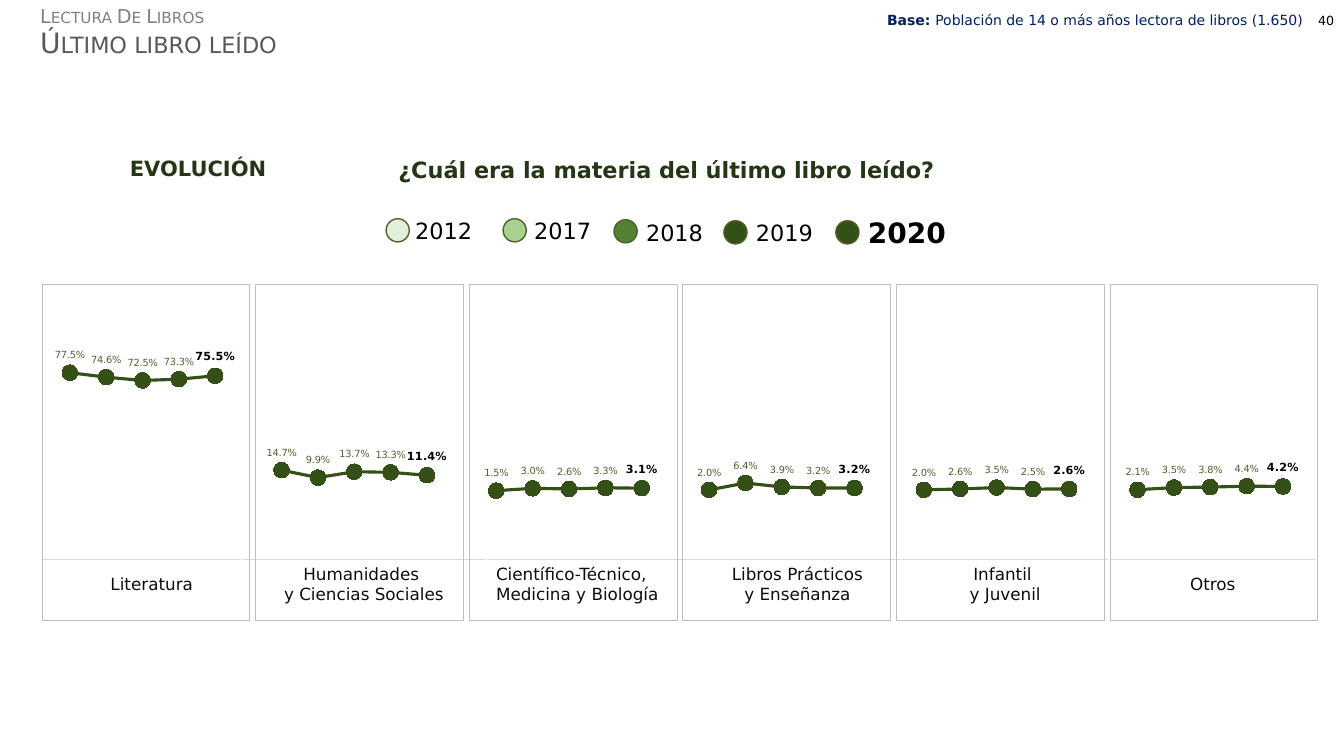
from lxml import etree
from pptx import Presentation
from pptx.chart import data as chart_data
from pptx.dml.color import RGBColor
from pptx.enum import chart as chart_enum, shapes, text
from pptx.oxml import parse_xml
from pptx.oxml.ns import nsdecls, qn
from pptx.util import Inches, Pt

FONT = "DejaVu Sans"
BLACK = RGBColor(0x00, 0x00, 0x00)
WHITE = RGBColor(0xFF, 0xFF, 0xFF)
INK = RGBColor(0x0D, 0x0D, 0x0D)
GRAY = RGBColor(0x80, 0x80, 0x80)
DARK_GRAY = RGBColor(0x59, 0x59, 0x59)
PANEL_GRAY = RGBColor(0xBF, 0xBF, 0xBF)
RULE_GRAY = RGBColor(0xD9, 0xD9, 0xD9)
NAVY = RGBColor(0x00, 0x20, 0x60)
HEADING_GREEN = RGBColor(0x23, 0x36, 0x16)
LABEL_GREEN = RGBColor(0x4E, 0x61, 0x2D)
DEEP_GREEN = RGBColor(0x34, 0x50, 0x16)
MID_GREEN = RGBColor(0x54, 0x82, 0x35)
LIGHT_GREEN = RGBColor(0xA9, 0xD1, 0x8E)
PALE_GREEN = RGBColor(0xE2, 0xF0, 0xD9)

PERCENT = '0.0"%"'
PANEL_SIZE = (2.06, 3.34)
PANEL_LEFT, PANEL_TOP = 0.42, 2.82
PANEL_PITCH = (11.01 - PANEL_LEFT) / 5
CENTER, LEFT, RIGHT = text.PP_ALIGN.CENTER, text.PP_ALIGN.LEFT, text.PP_ALIGN.RIGHT
MIDDLE, TOP = text.MSO_ANCHOR.MIDDLE, text.MSO_ANCHOR.TOP

# subject lines, alignment, column width, chart left, yearly percentages
SUBJECTS = [
    (["Literatura"], CENTER, 1.98, 0.42, (77.5, 74.6, 72.5, 73.3, 75.5)),
    (["Humanidades ", "y Ciencias Sociales"], CENTER, 2.42, 2.52,
     (14.7, 9.9, 13.7, 13.3, 11.4)),
    (["Científico-Técnico,", "Medicina y Biología"], LEFT, 2.06, 4.65,
     (1.5, 3, 2.6, 3.3, 3.1)),
    (["Libros Prácticos", "y Enseñanza"], CENTER, 2.06, 6.76,
     (2, 6.4, 3.9, 3.2, 3.2)),
    (["Infantil ", "y Juvenil"], CENTER, 2.06, 8.89, (2, 2.6, 3.5, 2.5, 2.6)),
    (["Otros"], CENTER, 2.06, 11.01, (2.1, 3.5, 3.8, 4.4, 4.2)),
]

# year, dot colour, dot left and top, year box (left, top, width, height)
YEARS = [
    ("2012", PALE_GREEN, 3.83, 2.17, (4.02, 2.11, 0.77, 0.37)),
    ("2017", LIGHT_GREEN, 4.99, 2.17, (5.2, 2.11, 0.77, 0.37)),
    ("2018", MID_GREEN, 6.09, 2.18, (6.31, 2.12, 0.77, 0.37)),
    ("2019", DEEP_GREEN, 7.18, 2.19, (7.4, 2.13, 0.77, 0.37)),
    ("2020", DEEP_GREEN, 8.29, 2.19, (8.51, 2.09, 1, 0.44)),
]


def style_run(run, size, color, bold=False, small_caps=False):
    run.font.name, run.font.size, run.font.bold = FONT, Pt(size), bold
    run.font.color.rgb = color
    if small_caps:
        run.font._element.set("cap", "small")


def add_text(slide, box, *runs, size, color, bold=False, align=LEFT, anchor=TOP,
             wrap=True, spacing=None, small_caps=False):
    """Place one paragraph; each run is a string or a (string, bold) pair."""
    frame = slide.shapes.add_textbox(*map(Inches, box)).text_frame
    frame.word_wrap, frame.vertical_anchor = wrap, anchor
    paragraph = frame.paragraphs[0]
    paragraph.alignment = align
    if spacing:
        paragraph.line_spacing = spacing
    for item in runs:
        words, heavy = (item, bold) if isinstance(item, str) else item
        run = paragraph.add_run()
        run.text = words
        style_run(run, size, color, heavy, small_caps)


def add_outlined(slide, kind, box, line, width, fill=None):
    shape = slide.shapes.add_shape(kind, *map(Inches, box))
    shape.shadow.inherit = False
    if fill is None:
        shape.fill.background()
    else:
        shape.fill.solid()
        shape.fill.fore_color.rgb = fill
    shape.line.color.rgb, shape.line.width = line, Pt(width)


def set_border(cell, side, color, width):
    border = etree.SubElement(cell._tc.get_or_add_tcPr(), qn("a:" + side), w=str(Pt(width)))
    fill = etree.SubElement(border, qn("a:solidFill"))
    etree.SubElement(fill, qn("a:srgbClr"), val=str(color))


def add_subject_table(slide, box):
    table = slide.shapes.add_table(1, len(SUBJECTS), *map(Inches, box)).table
    table.first_row = table.horz_banding = False
    for index, (lines, align, width, _, _) in enumerate(SUBJECTS):
        table.columns[index].width = Inches(width)
        cell = table.cell(0, index)
        cell.vertical_anchor = MIDDLE
        for side, color, weight in (("lnL", WHITE, 1), ("lnR", WHITE, 1),
                                    ("lnT", RULE_GRAY, 1), ("lnB", WHITE, 3)):
            set_border(cell, side, color, weight)
        cell.fill.background()
        cell.text = "\n".join(lines)
        for paragraph in cell.text_frame.paragraphs:
            paragraph.alignment = align
            style_run(paragraph.runs[0], 12, INK)
    first = table.cell(0, 0).text_frame.paragraphs[0]
    first._p.get_or_add_pPr().set("marL", str(Inches(0.19)))


def set_plot_area(chart, x, y, w, h):
    plot_area = chart._chartSpace.chart.plotArea
    for old in plot_area.findall(qn("c:layout")):
        plot_area.remove(old)
    sizes = "".join(f'<c:{tag} val="{value}"/>' for tag, value in zip("xywh", (x, y, w, h)))
    plot_area.insert(0, parse_xml(
        f'<c:layout {nsdecls("c")}><c:manualLayout><c:layoutTarget val="inner"/>'
        f'<c:xMode val="edge"/><c:yMode val="edge"/>{sizes}</c:manualLayout></c:layout>'))


def add_trend(slide, box, values):
    data = chart_data.CategoryChartData(number_format=PERCENT)
    data.categories = ["1", "2", "3", "4", "5"]
    data.add_series("Series 1", values)
    chart = slide.shapes.add_chart(
        chart_enum.XL_CHART_TYPE.LINE_MARKERS, *map(Inches, box), data).chart
    chart.has_legend = chart.has_title = False
    chart.font.name, chart.font.size, chart.font.color.rgb = FONT, Pt(12), BLACK
    set_plot_area(chart, 0.045, 0.129, 0.876, 0.824)

    scale = chart.value_axis
    scale.minimum_scale, scale.maximum_scale = 0, 100
    scale.has_major_gridlines = False
    scale.visible = chart.category_axis.visible = False

    chart.plots[0].vary_by_categories = False
    trend = chart.plots[0].series[0]
    trend.smooth = False
    trend.format.line.color.rgb, trend.format.line.width = DEEP_GREEN, Pt(2.25)
    trend.marker.style, trend.marker.size = chart_enum.XL_MARKER_STYLE.CIRCLE, 11
    trend.marker.format.fill.solid()
    trend.marker.format.fill.fore_color.rgb = DEEP_GREEN
    trend.marker.format.line.color.rgb = DEEP_GREEN

    labels = trend.data_labels
    labels.show_value = True
    labels.number_format, labels.number_format_is_linked = PERCENT, False
    latest = trend.points[len(values) - 1].data_label
    for label, size, color, bold in ((labels, 7, LABEL_GREEN, False),
                                     (latest, 8, BLACK, True)):
        label.position = chart_enum.XL_LABEL_POSITION.ABOVE
        label.font.name, label.font.size, label.font.bold = FONT, Pt(size), bold
        label.font.color.rgb = color


def add_panels(slide):
    for index in range(len(SUBJECTS)):
        box = (PANEL_LEFT + index * PANEL_PITCH, PANEL_TOP, *PANEL_SIZE)
        add_outlined(slide, shapes.MSO_SHAPE.RECTANGLE, box, PANEL_GRAY, 0.75)
    for _, _, _, left, values in SUBJECTS:
        add_trend(slide, (left, PANEL_TOP + 0.29, PANEL_SIZE[0], 1.87), values)


def add_year_legend(slide):
    for year, color, left, top, box in YEARS:
        latest = year == YEARS[-1][0]
        add_text(slide, box, year, size=20 if latest else 16, color=BLACK,
                 bold=latest, wrap=False)
        add_outlined(slide, shapes.MSO_SHAPE.OVAL, (left, top, 0.23, 0.23),
                     LABEL_GREEN, 1, fill=color)


def add_header(slide):
    add_text(slide, (0.3, 0.01, 2.5, 0.32), "Lectura De Libros", size=13.7, color=GRAY,
             anchor=MIDDLE, spacing=0.9, small_caps=True)
    add_text(slide, (0.3, 0.25, 2.88, 0.39), "Último libro leído", size=20,
             color=DARK_GRAY, anchor=MIDDLE, spacing=0.9, small_caps=True)
    add_text(slide, (8.7, 0.07, 4.39, 0.27), ("Base: ", True),
             "Población de 14 o más años lectora de libros (1.650)", size=10, color=NAVY)
    add_text(slide, (12.7, 0, 0.63, 0.4), "40", size=9, color=BLACK, align=RIGHT,
             anchor=MIDDLE)


def add_question(slide):
    add_text(slide, (1.19, 1.49, 1.6, 0.35), "EVOLUCIÓN", size=15, color=HEADING_GREEN,
             bold=True)
    add_text(slide, (3.8, 1.38, 5.62, 0.6), "¿Cuál era la materia del último libro leído?",
             size=16, color=HEADING_GREEN, bold=True, align=CENTER, anchor=MIDDLE)


def main():
    deck = Presentation()
    deck.slide_width, deck.slide_height = Inches(13.33), Inches(7.5)
    slide = deck.slides.add_slide(deck.slide_layouts[6])
    add_subject_table(slide, (PANEL_LEFT, 5.55, 12.65, 0.5))
    add_panels(slide)
    add_header(slide)
    add_question(slide)
    add_year_legend(slide)
    deck.save("out.pptx")


if __name__ == "__main__":
    main()
